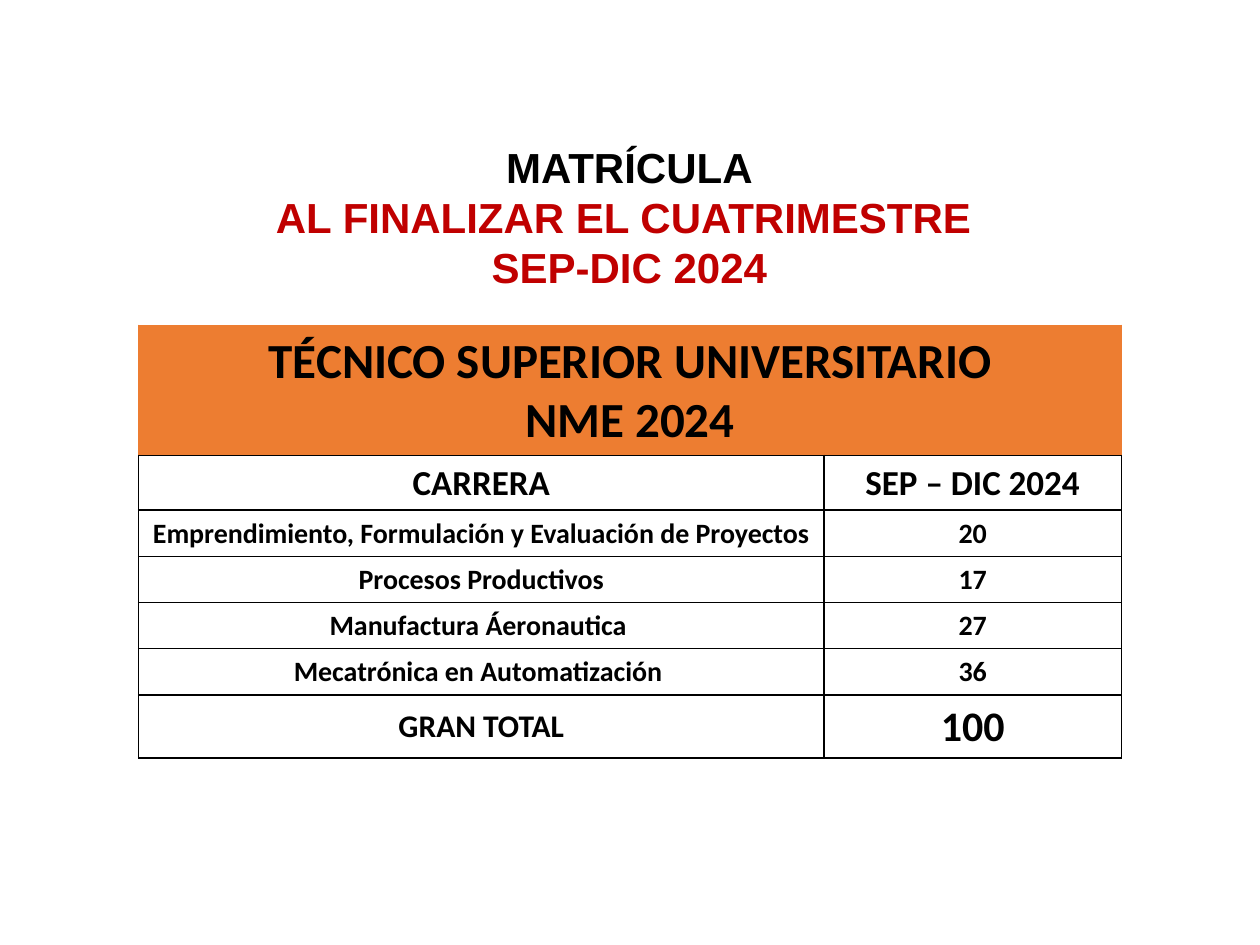
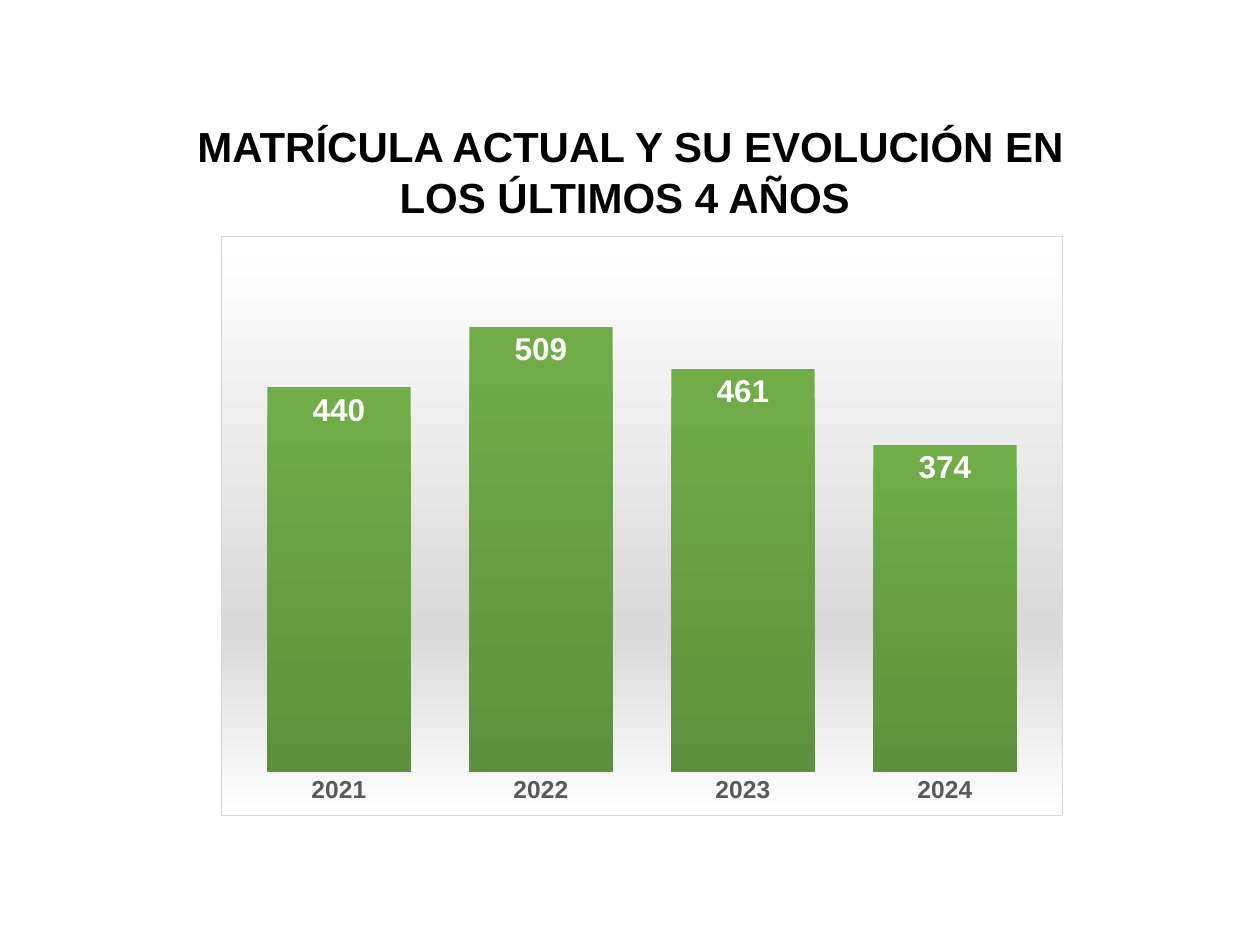
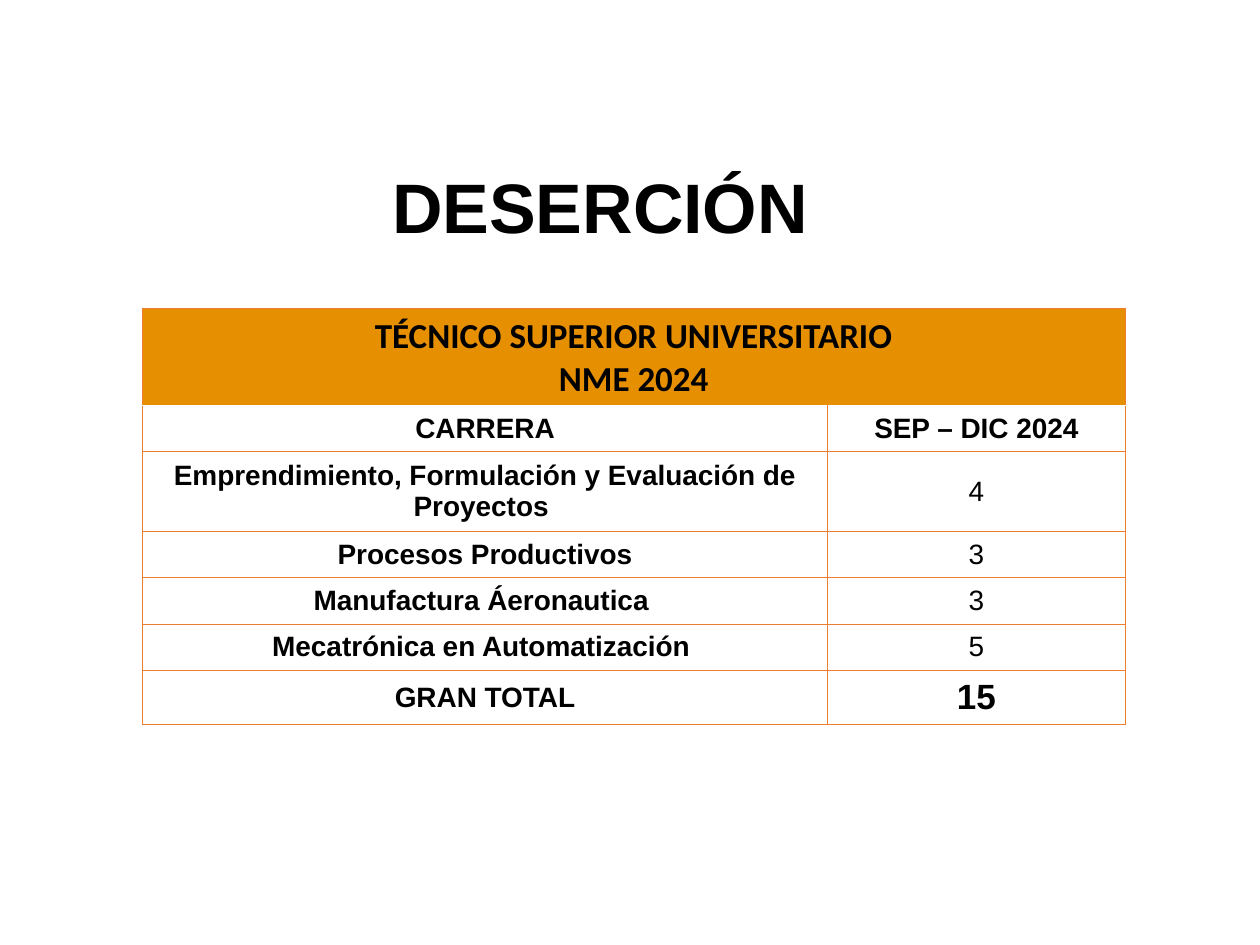
from dataclasses import dataclass

from lxml.etree import SubElement
from pptx import Presentation
from pptx.chart.data import CategoryChartData
from pptx.dml.color import RGBColor
from pptx.enum.chart import XL_CHART_TYPE, XL_LABEL_POSITION, XL_TICK_MARK
from pptx.enum.text import MSO_ANCHOR, MSO_AUTO_SIZE, PP_ALIGN
from pptx.oxml import parse_xml
from pptx.oxml.ns import nsdecls, qn
from pptx.util import Inches, Pt


@dataclass(frozen=True)
class Theme:
    black: str = "000000"
    white: str = "FFFFFF"
    red: str = "C00000"
    orange: str = "ED7D31"
    amber: str = "E68F00"
    green: str = "70AD47"
    dark_green: str = "5E913C"
    silver: str = "D9D9D9"
    axis_gray: str = "595959"
    sans: str = "Arial"
    table_face: str = "Calibri"
    title_size: int = 24
    big_title_size: int = 40
    year_size: int = 14
    value_size: int = 18


THEME = Theme()


@dataclass(frozen=True)
class TitleLine:
    text: str
    color: str = THEME.black
    size: int = THEME.title_size


@dataclass(frozen=True)
class Border:
    color: str
    points: float


@dataclass(frozen=True)
class EnrolmentTable:
    """Position, look and figures of one table by programme."""
    left: float
    top: float
    height: float
    banner_fill: str
    grid: Border
    seam: Border
    face: str
    banner_size: int
    heading_size: int
    row_size: int
    total_label_size: int
    total_size: int
    counts_bold: bool
    counts: tuple[int, ...]


BANNER = "TÉCNICO SUPERIOR UNIVERSITARIO\nNME 2024"
HEADINGS = ("CARRERA", "SEP – DIC 2024")
PROGRAMMES = (
    "Emprendimiento, Formulación y Evaluación de Proyectos ",
    "Procesos Productivos",
    "Manufactura Áeronautica ",
    "Mecatrónica en Automatización ",
)
COLUMN_WIDTHS = (5.44, 2.36)
BANNER_HEIGHT, ROW_HEIGHT = 0.66, 0.28
BANNER_EDGE = Border(THEME.orange, 0.5)

ENROLMENT = EnrolmentTable(
    left=1.1, top=2.58, height=3.43, banner_fill=THEME.orange,
    grid=Border(THEME.black, 1), seam=Border(THEME.black, 1),
    face=THEME.table_face, banner_size=28, heading_size=20, row_size=16,
    total_label_size=18, total_size=24, counts_bold=True,
    counts=(20, 17, 27, 36),
)
DROPOUT = EnrolmentTable(
    left=1.13, top=2.45, height=3.3, banner_fill=THEME.amber,
    grid=BANNER_EDGE, seam=Border(THEME.white, 1),
    face=THEME.sans, banner_size=20, heading_size=16, row_size=16,
    total_label_size=16, total_size=20, counts_bold=False,
    counts=(4, 3, 3, 5),
)
ENROLMENT_BY_YEAR = {"2021": 440, "2022": 509, "2023": 461, "2024": 374}


def style_font(font, face: str, size: int, color: str, bold: bool = True) -> None:
    font.name = face
    font.size = Pt(size)
    font.bold = bold
    font.color.rgb = RGBColor.from_string(color)


def add_titled_slide(prs, left: float, top: float, width: float, height: float,
                     lines: tuple[TitleLine, ...]):
    slide = prs.slides.add_slide(prs.slide_layouts[5])
    title = slide.shapes.title
    title.left, title.top = Inches(left), Inches(top)
    title.width, title.height = Inches(width), Inches(height)
    frame = title.text_frame
    frame.text = "\n".join(line.text for line in lines)
    frame.word_wrap = True
    frame.auto_size = MSO_AUTO_SIZE.SHAPE_TO_FIT_TEXT
    frame.vertical_anchor = MSO_ANCHOR.TOP
    for paragraph, line in zip(frame.paragraphs, lines):
        paragraph.alignment = PP_ALIGN.CENTER
        style_font(paragraph.font, THEME.sans, line.size, line.color)
    return slide


def set_borders(cell, left: Border, right: Border, top: Border, bottom: Border) -> None:
    properties = cell._tc.get_or_add_tcPr()
    edges = (("a:lnL", left), ("a:lnR", right), ("a:lnT", top), ("a:lnB", bottom))
    for position, (tag, border) in enumerate(edges):
        line = parse_xml(
            f'<{tag} {nsdecls("a")} w="{Pt(border.points)}"><a:solidFill>'
            f'<a:srgbClr val="{border.color}"/></a:solidFill></{tag}>')
        properties.insert(position, line)


def fill_cell(cell, text: str, face: str, size: int, fill: str, bold: bool = True) -> None:
    cell.text = text
    cell.vertical_anchor = MSO_ANCHOR.MIDDLE
    cell.fill.solid()
    cell.fill.fore_color.rgb = RGBColor.from_string(fill)
    for paragraph in cell.text_frame.paragraphs:
        paragraph.alignment = PP_ALIGN.CENTER
        style_font(paragraph.font, face, size, THEME.black, bold)


def add_enrolment_table(slide, look: EnrolmentTable) -> None:
    # Each row: both texts, both sizes, and whether the count is bold
    rows = [(HEADINGS, (look.heading_size,) * 2, True)]
    rows += [((name, str(count)), (look.row_size,) * 2, look.counts_bold)
             for name, count in zip(PROGRAMMES, look.counts)]
    rows.append((("GRAN TOTAL", str(sum(look.counts))),
                 (look.total_label_size, look.total_size), True))

    holder = slide.shapes.add_table(
        len(rows) + 1, len(COLUMN_WIDTHS), Inches(look.left), Inches(look.top),
        Inches(sum(COLUMN_WIDTHS)), Inches(look.height))
    table = holder.table
    table.first_row = table.horz_banding = False
    for column, width in zip(table.columns, COLUMN_WIDTHS):
        column.width = Inches(width)
    for number, row in enumerate(table.rows):
        row.height = Inches(ROW_HEIGHT if number else BANNER_HEIGHT)
    holder.height = Inches(look.height)

    # Banner across both columns
    banner = table.cell(0, 0)
    banner.merge(table.cell(0, 1))
    fill_cell(banner, BANNER, THEME.table_face, look.banner_size, look.banner_fill)
    for cell in table.rows[0].cells:
        set_borders(cell, BANNER_EDGE, BANNER_EDGE, BANNER_EDGE, look.seam)

    # Headings, programmes and total
    for number, (texts, sizes, count_bold) in enumerate(rows, start=1):
        top = look.seam if number == 1 else look.grid
        for column, (text, size) in enumerate(zip(texts, sizes)):
            cell = table.cell(number, column)
            fill_cell(cell, text, look.face, size, THEME.white,
                      bold=count_bold or column == 0)
            set_borders(cell, look.grid, look.grid, top, look.grid)


def add_vertical_gradient(properties, stops: tuple[tuple[int, str], ...]) -> None:
    gradient = SubElement(properties, qn("a:gradFill"), rotWithShape="1")
    stop_list = SubElement(gradient, qn("a:gsLst"))
    for percent, color in stops:
        stop = SubElement(stop_list, qn("a:gs"), pos=str(percent * 1000))
        SubElement(stop, qn("a:srgbClr"), val=color)
    SubElement(gradient, qn("a:lin"), ang=str(90 * 60000), scaled="0")


def add_evolution_chart(slide) -> None:
    data = CategoryChartData()
    data.categories = list(ENROLMENT_BY_YEAR)
    data.add_series("Series 1", list(ENROLMENT_BY_YEAR.values()))
    chart = slide.shapes.add_chart(
        XL_CHART_TYPE.COLUMN_CLUSTERED, Inches(1.75), Inches(1.87),
        Inches(6.69), Inches(4.61), data).chart
    chart.has_legend = chart.has_title = False
    style_font(chart.font, THEME.table_face, 10, THEME.black, bold=False)

    # Axes
    years, amounts = chart.category_axis, chart.value_axis
    years.major_tick_mark = XL_TICK_MARK.NONE
    years.format.line.fill.background()
    style_font(years.tick_labels.font, THEME.sans, THEME.year_size, THEME.axis_gray)
    amounts.minimum_scale, amounts.maximum_scale = 0, 600
    amounts.has_major_gridlines = False
    amounts.visible = False

    # Columns and their values
    plot = chart.plots[0]
    plot.gap_width = 41
    plot.vary_by_categories = False
    enrolment = plot.series[0]
    add_vertical_gradient(enrolment._element.get_or_add_spPr(),
                          ((0, THEME.green), (100, THEME.dark_green)))
    labels = enrolment.data_labels
    labels.show_value = True
    labels.position = XL_LABEL_POSITION.INSIDE_END
    style_font(labels.font, THEME.sans, THEME.value_size, THEME.white)

    # Chart background and frame
    background = parse_xml(f'<c:spPr {nsdecls("c", "a")}/>')
    add_vertical_gradient(background, ((0, THEME.white), (68, THEME.silver),
                                       (100, THEME.white)))
    frame = SubElement(background, qn("a:ln"), w=str(Pt(0.75)))
    SubElement(SubElement(frame, qn("a:solidFill")), qn("a:srgbClr"), val=THEME.silver)
    chart._chartSpace.find(qn("c:chart")).addnext(background)


def main() -> None:
    prs = Presentation()
    prs.slide_width, prs.slide_height = Inches(10), Inches(7.5)

    enrolment = add_titled_slide(prs, 1.55, 1.07, 6.89, 1.31, (
        TitleLine("MATRÍCULA"),
        TitleLine("AL FINALIZAR EL CUATRIMESTRE ", THEME.red),
        TitleLine("SEP-DIC 2024", THEME.red),
    ))
    add_enrolment_table(enrolment, ENROLMENT)

    evolution = add_titled_slide(prs, 1.13, 0.91, 7.75, 0.91, (
        TitleLine("MATRÍCULA ACTUAL Y SU EVOLUCIÓN EN LOS ÚLTIMOS 4 AÑOS "),
    ))
    add_evolution_chart(evolution)

    dropout = add_titled_slide(prs, 1.85, 1.25, 5.98, 0.77, (
        TitleLine("DESERCIÓN ", size=THEME.big_title_size),
    ))
    add_enrolment_table(dropout, DROPOUT)

    prs.save("out.pptx")


if __name__ == "__main__":
    main()
